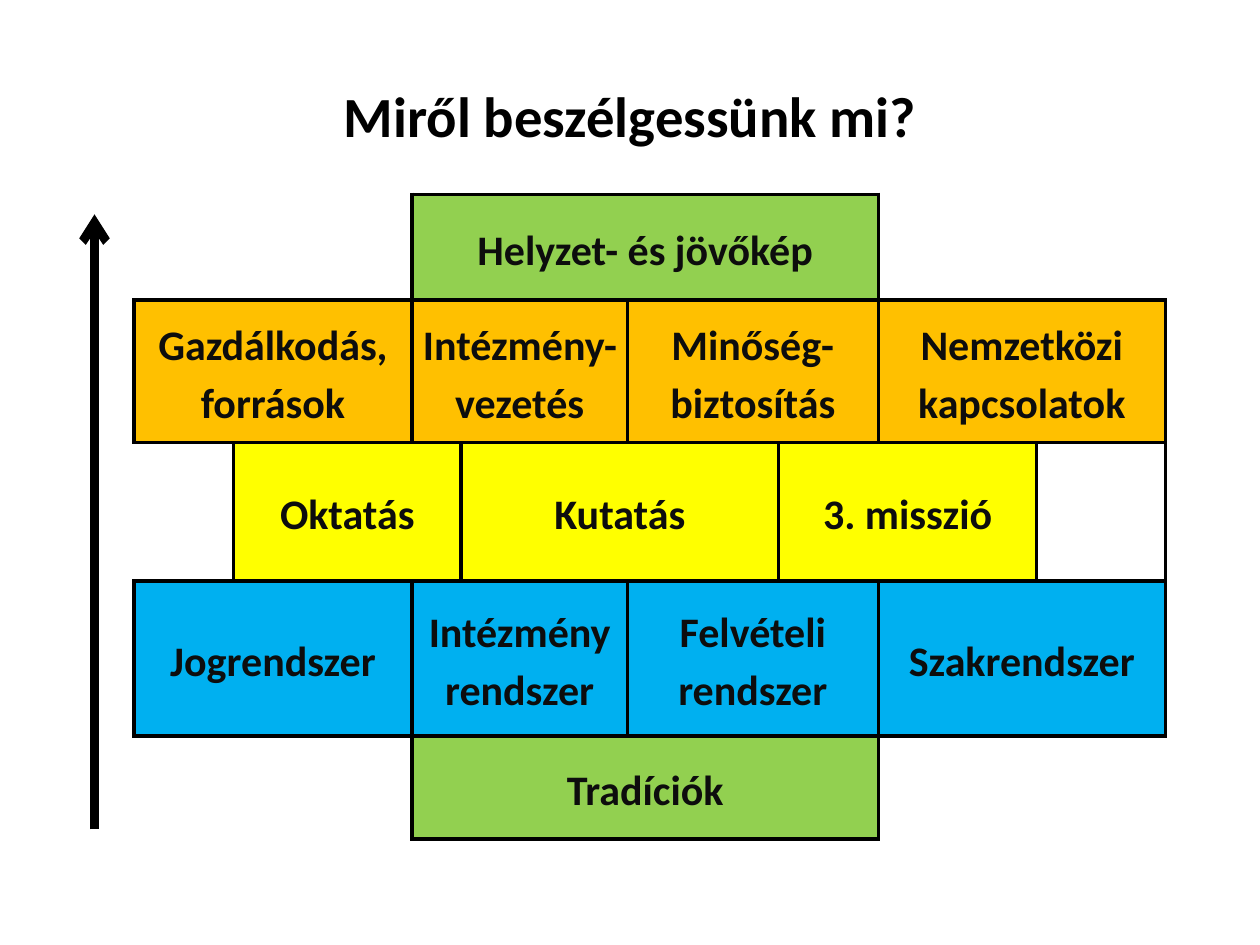
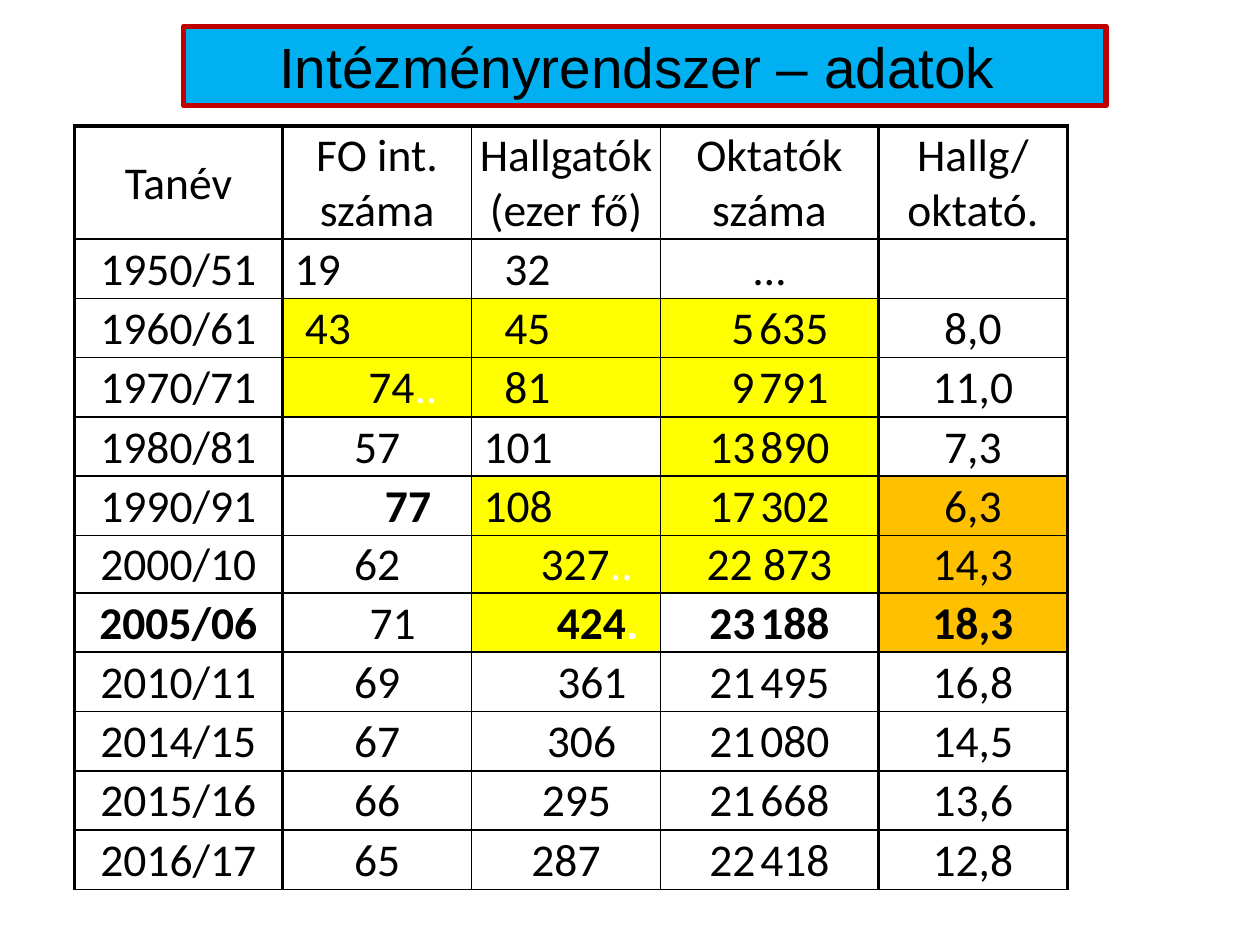
from itertools import accumulate

from lxml import etree
from pptx import Presentation
from pptx import util as u
from pptx.dml.color import RGBColor
from pptx.enum import shapes, text
from pptx.oxml.ns import qn

Pt = u.Pt
C = {"black": "000000", "ink": "0D0D0D", "white": "FFFFFF", "green": "92D050",
     "orange": "FFC000", "yellow": "FFFF00", "blue": "00B0F0", "red": "C00000"}
PLAIN_TABLE = "{2D5ABB26-0587-4C30-8999-92F81FD0307C}"
ALIGN = {"l": text.PP_ALIGN.LEFT, "c": text.PP_ALIGN.CENTER, "r": text.PP_ALIGN.RIGHT}
THICK, THIN = 2.25, 1

# Blocks of the pyramid: (text, columns spanned); None marks an empty corner
BLOCK_COLS = [57, 102, 28, 95, 86.5, 57, 90.5, 73.5]
BLOCK_ROWS = [60.5, 81.5, 79, 88.5, 59]
BLOCKS = [
    ("green", [(None, 2), ("Helyzet- és jövőkép", 4), (None, 2)]),
    ("orange", [("Gazdálkodás, források", 2), ("Intézmény-vezetés", 2),
                ("Minőség-biztosítás", 2), ("Nemzetközi kapcsolatok", 2)]),
    ("yellow", [(None, 1), ("Oktatás", 2), ("Kutatás", 2), ("3. misszió", 2), (None, 1)]),
    ("blue", [("Jogrendszer", 2), ("Intézmény rendszer", 2),
              ("Felvételi rendszer", 2), ("Szakrendszer", 2)]),
    ("green", [(None, 2), ("Tradíciók", 4), (None, 2)]),
]

# Yearly data
DATA_COLS = [119, 108, 108, 124.5, 108]
DATA = [
    ["Tanév", "FO int. száma", "Hallgatók (ezer fő)", "Oktatók száma", "Hallg/ oktató."],
    ["1950/51", "19", "32", "…", ""],
    ["1960/61", "43", "45", "5 635", "8,0"],
    ["1970/71", "74..", "81", "9 791", "11,0"],
    ["1980/81", "57", "101", "13 890", "7,3"],
    ["1990/91", "77", "108", "17 302", "6,3"],
    ["2000/10", "62", "327..", "22 873", "14,3"],
    ["2005/06", "71", "424.", "23 188", "18,3"],
    ["2010/11", "69", "361", "21 495", "16,8"],
    ["2014/15", "67", "306", "21 080", "14,5"],
    ["2015/16", "66", "295", "21 668", "13,6"],
    ["2016/17", "65", "287", "22 418", "12,8"],
]
DATA_ROWS = [64.5 if r == 0 else 32.4 if r == 6 else 33.9 for r in range(len(DATA))]
# Cells set off from the centre: alignment and indent in steps
STEP = 5.9
SHIFTS = {(1, 1): ("l", 1), (1, 2): ("l", 3), (2, 1): ("l", 2), (2, 2): ("l", 3),
          (2, 3): ("c", 2), (3, 1): ("c", 5), (3, 2): ("l", 3), (3, 3): ("c", 2),
          (4, 2): ("l", 1), (5, 1): ("c", 6), (5, 2): ("l", 1), (6, 2): ("c", 4),
          (7, 1): ("c", 3), (7, 2): ("r", 2), (8, 2): ("c", 5), (9, 2): ("c", 3),
          (10, 2): ("c", 2)}
BOLD = {(5, 1), (7, 0), (7, 2), (7, 3), (7, 4)}
FILLS = {"yellow": {1: (2, 3), 2: (2, 3, 5, 6, 7), 3: (2, 3, 4, 5, 6)},
         "orange": {4: (5, 6, 7)}}
CELL_FILL = {(r, c): name for name, cols in FILLS.items()
             for c, rows in cols.items() for r in rows}


def rgb(name):
    return RGBColor.from_string(C[name])


def set_font(font, name, size, color, bold=False):
    font.name, font.size, font.bold = name, Pt(size), bold
    font.color.rgb = rgb(color)


def set_title(s, box, words, font, bold=False):
    sp = s.shapes.title
    sp.left, sp.top, sp.width, sp.height = map(Pt, box)
    tf = sp.text_frame
    tf.text = words
    tf.vertical_anchor = text.MSO_ANCHOR.MIDDLE
    tf.auto_size = text.MSO_AUTO_SIZE.NONE
    p = tf.paragraphs[0]
    p.alignment = ALIGN["c"]
    set_font(p.font, font, 32.4, "black", bold)
    return sp


def add_grid(s, left, top, cols, rows):
    """Add a table without a style, with the given column widths and row heights."""
    frame = s.shapes.add_table(len(rows), len(cols), Pt(left), Pt(top),
                               Pt(sum(cols)), Pt(sum(rows)))
    tbl = frame.table
    tbl.first_row = tbl.horz_banding = False
    for style in frame.element.iter(qn("a:tableStyleId")):
        style.text = PLAIN_TABLE
    for col, width in zip(tbl.columns, cols):
        col.width = Pt(width)
    for row, height in zip(tbl.rows, rows):
        row.height = Pt(height)
    return tbl


def set_borders(cell, **widths):
    """Set borders by side (L, R, T, B); they go before the fill."""
    tcPr = cell._tc.get_or_add_tcPr()
    for i, side in enumerate(x for x in "LRTB" if x in widths):
        ln = etree.Element(qn("a:ln" + side), w=str(Pt(widths[side])))
        fill = etree.SubElement(ln, qn("a:solidFill"))
        etree.SubElement(fill, qn("a:srgbClr"), val=C["black"])
        tcPr.insert(i, ln)


def set_fill(cell, name):
    if name:
        cell.fill.solid()
        cell.fill.fore_color.rgb = rgb(name)
    else:
        cell.fill.background()


def set_margins(cell, left, top, right, bottom):
    cell.vertical_anchor = text.MSO_ANCHOR.MIDDLE
    cell.margin_left, cell.margin_top = Pt(left), Pt(top)
    cell.margin_right, cell.margin_bottom = Pt(right), Pt(bottom)


def add_pyramid(s, left, top):
    tbl = add_grid(s, left, top, BLOCK_COLS, BLOCK_ROWS)
    last = len(BLOCKS) - 1
    for r, (color, blocks) in enumerate(BLOCKS):
        ends = accumulate(span for _, span in blocks)
        for (words, span), end in zip(blocks, ends):
            start = end - span
            cell = tbl.cell(r, start)
            if span > 1:
                cell.merge(tbl.cell(r, end - 1))
            set_fill(cell, color if words else None)
            # Empty corners have no line on the outside of the table
            sides = "LRTB"
            if not words:
                sides = (("R" if start == 0 else "L") + ("T" if r > 0 else "")
                         + ("B" if r < last else ""))
            for c in range(start, end):
                set_borders(tbl.cell(r, c), **dict.fromkeys(sides, THICK))
            if words:
                set_margins(cell, 5, 0, 5, 0)
                cell.text = words
                p = cell.text_frame.paragraphs[0]
                p.alignment, p.line_spacing = ALIGN["c"], 1.15
                set_font(p.font, "Calibri", 24, "ink", True)


def add_up_arrow(s, x, bottom, height):
    line = s.shapes.add_connector(shapes.MSO_CONNECTOR.STRAIGHT, Pt(x), Pt(bottom),
                                  Pt(x), Pt(bottom - height))
    line.line.color.rgb = rgb("black")
    line.line.width = Pt(5)
    etree.SubElement(line.line._get_or_add_ln(), qn("a:tailEnd"), type="arrow")
    etree.SubElement(line.element.spPr, qn("a:effectLst"))


def fill_data_cell(cell, r, c, words):
    align, steps = SHIFTS.get((r, c), ("c", 0))
    indent = 1 + steps * STEP
    set_margins(cell, 1 if align == "r" else indent, 1, indent if align == "r" else 1, 0)
    p = cell.text_frame.paragraphs[0]
    p.alignment = ALIGN[align]
    set_font(p.font, "Calibri", 26, "black", (r, c) in BOLD)
    # White dots after some figures, narrow gap before the thousands
    figure = words.rstrip(".") if r else words
    parts = [figure]
    if r and " " in figure and figure != "22 873":
        parts = list(figure.partition(" "))
    for part in filter(None, parts):
        run = p.add_run()
        run.text = part
        if part == " ":
            run.font.size = Pt(12)
    if figure != words:
        run = p.add_run()
        run.text = words[len(figure):]
        run.font.color.rgb = rgb("white")


def add_data_table(s, left, top):
    tbl = add_grid(s, left, top, DATA_COLS, DATA_ROWS)
    edges = [THICK, THICK, THIN, THIN, THICK, THICK]
    for r, row in enumerate(DATA):
        for c, words in enumerate(row):
            cell = tbl.cell(r, c)
            set_fill(cell, CELL_FILL.get((r, c)))
            set_borders(cell, L=edges[c], R=edges[c + 1],
                        T=THIN if r else THICK, B=THIN)
            fill_data_cell(cell, r, c, words)


def topics_slide(prs):
    s = prs.slides.add_slide(prs.slide_layouts[5])
    set_title(s, (42.5, 43, 635, 45.5), "Miről beszélgessünk mi?", "Calibri", True)
    add_pyramid(s, 76.5, 111)
    add_up_arrow(s, 54, 474, 351.5)


def data_slide(prs):
    s = prs.slides.add_slide(prs.slide_layouts[5])
    sp = set_title(s, (105, 15, 527, 45.5), "Intézményrendszer – adatok", "Arial")
    sp.text_frame.margin_right = Pt(16.2)
    sp.fill.solid()
    sp.fill.fore_color.rgb = rgb("blue")
    sp.line.color.rgb = rgb("red")
    sp.line.width = Pt(3)
    add_data_table(s, 42.5, 72)


def main():
    prs = Presentation()
    prs.slide_width, prs.slide_height = Pt(720), Pt(540)
    topics_slide(prs)
    data_slide(prs)
    prs.save("out.pptx")


if __name__ == "__main__":
    main()
